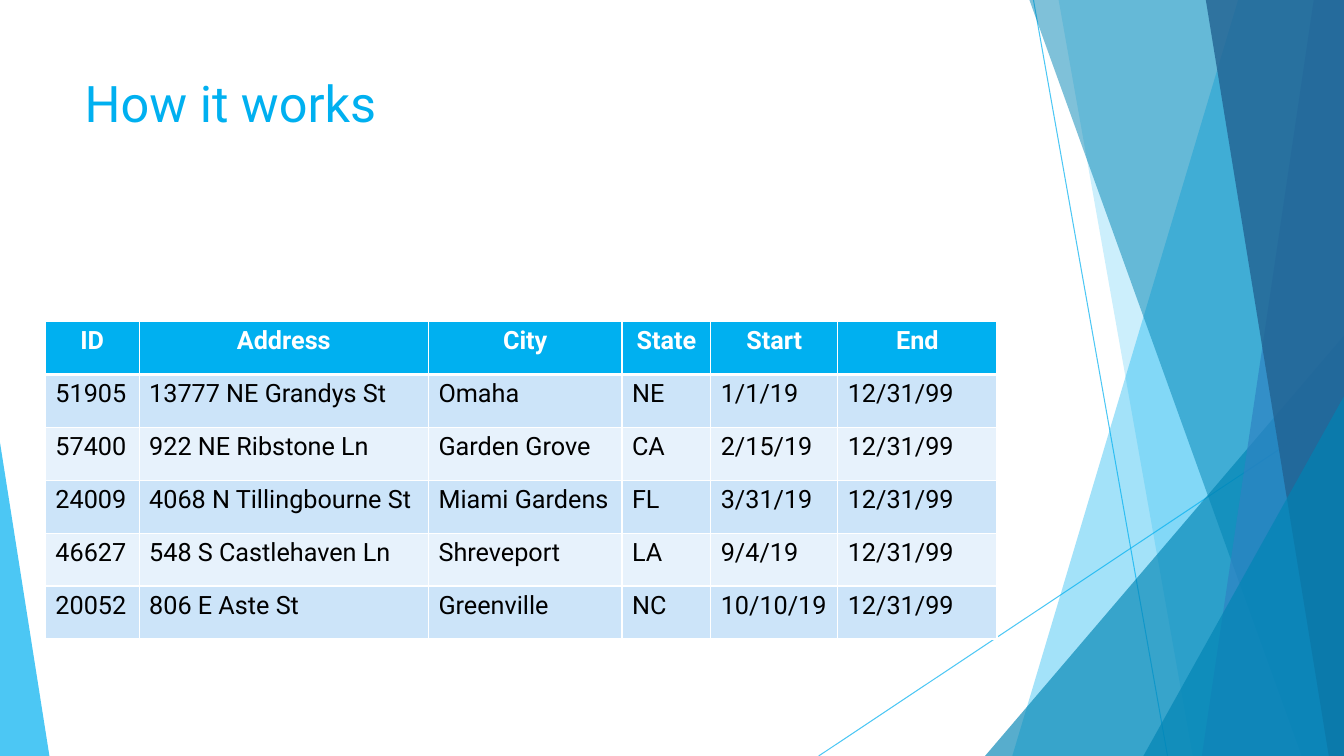
from lxml.etree import SubElement
from pptx import Presentation
from pptx.dml.color import RGBColor
from pptx.enum.shapes import MSO_CONNECTOR, MSO_SHAPE
from pptx.enum.text import MSO_ANCHOR, PP_ALIGN
from pptx.oxml import parse_xml
from pptx.oxml.ns import nsdecls, qn
from pptx.util import Inches, Pt

WIDTH, HEIGHT = 13.33, 7.5
FONT = "Roboto"
SKY, TEAL, BLUE, NAVY = "00B0F0", "0084B4", "2E83C3", "226292"
WHITE, BLACK = "FFFFFF", "000000"
ROW_FILLS = ["CCE4F9", "E7F2FC"]

TITLE = "How it works"
ROWS = [
    ["ID", "Address", "City", "State", "Start", "End"],
    ["51905", "13777 NE Grandys St", "Omaha", "NE", "1/1/19", "12/31/99"],
    ["57400", "922 NE Ribstone Ln", "Garden Grove", "CA", "2/15/19", "12/31/99"],
    ["24009", "4068 N Tillingbourne St", "Miami Gardens", "FL", "3/31/19", "12/31/99"],
    ["46627", "548 S Castlehaven Ln", "Shreveport", "LA", "9/4/19", "12/31/99"],
    ["20052", "806 E Aste St", "Greenville", "NC", "10/10/19", "12/31/99"],
]
COL_WIDTHS = [0.93, 2.87, 1.92, 0.88, 1.26, 1.58]
ROW_HEIGHT = 0.525

# Lines: x1, y1, x2, y2
LINES = [(10.25, 0, 11.58, HEIGHT), (WIDTH, 4.03, 8.12, HEIGHT)]
# Bands reach the right edge: top left x, bottom left x, colour, opacity
# Triangles stand on the bottom edge: left, top, width, apex, colour, opacity
FACETS = [
    ("band", 12.28, 10.04, SKY, 36),
    ("band", 10.5, 11.83, SKY, 20),
    ("triangle", 9.77, 3.33, 3.56, 1, TEAL, 66),
    ("band", 10.21, 12.91, TEAL, 50),
    ("band", 13.03, 11.92, BLUE, 70),
    ("band", 11.96, 13.18, NAVY, 80),
    ("triangle", 11.34, 3.93, 1.99, 1, TEAL, 66),
    ("triangle", 0, 4.39, 0.49, 0, SKY, 70),
]


def rgb(color):
    return RGBColor.from_string(color)


def set_opacity(s, percent):
    for clr in s._element.spPr.iter(qn("a:srgbClr")):
        SubElement(clr, qn("a:alpha")).set("val", str(percent * 1000))


def add_line(shapes, x1, y1, x2, y2):
    s = shapes.add_connector(MSO_CONNECTOR.STRAIGHT, Inches(x1), Inches(y1), Inches(x2), Inches(y2))
    s.line.color.rgb = rgb(SKY)
    s.line.width = Pt(0.75)
    set_opacity(s, 70)
    SubElement(s._element.spPr, qn("a:effectLst"))


def add_band(shapes, top_x, bottom_x):
    fb = shapes.build_freeform(Inches(top_x), 0)
    corners = [(WIDTH, 0), (WIDTH, HEIGHT), (bottom_x, HEIGHT)]
    fb.add_line_segments([(Inches(x), Inches(y)) for x, y in corners], close=True)
    return fb.convert_to_shape()


def add_triangle(shapes, left, top, width, apex):
    s = shapes.add_shape(MSO_SHAPE.ISOSCELES_TRIANGLE, Inches(left), Inches(top),
                         Inches(width), Inches(HEIGHT - top))
    s.adjustments[0] = apex
    return s


def add_text(tf, text, size, color, bold=False, align=PP_ALIGN.LEFT):
    p = tf.paragraphs[0]
    p.alignment = align
    r = p.add_run()
    r.text = text
    r.font.name, r.font.size, r.font.bold = FONT, Pt(size), bold
    r.font.color.rgb = rgb(color)


def set_borders(cell, top, bottom):
    tcPr = cell._tc.get_or_add_tcPr()
    for i, (side, points) in enumerate([("L", 1), ("R", 1), ("T", top), ("B", bottom)]):
        tcPr.insert(i, parse_xml(
            f'<a:ln{side} {nsdecls("a")} w="{Pt(points)}"><a:solidFill>'
            f'<a:srgbClr val="{WHITE}"/></a:solidFill></a:ln{side}>'))


def add_address_table(shapes):
    table = shapes.add_table(len(ROWS), len(COL_WIDTHS), Inches(0.45), Inches(3.19),
                             Inches(sum(COL_WIDTHS)), Inches(ROW_HEIGHT * len(ROWS))).table
    for col, width in zip(table.columns, COL_WIDTHS):
        col.width = Inches(width)
    for i, values in enumerate(ROWS):
        table.rows[i].height = Inches(ROW_HEIGHT)
        header = i == 0
        for j, value in enumerate(values):
            cell = table.cell(i, j)
            cell.fill.solid()
            cell.fill.fore_color.rgb = rgb(SKY if header else ROW_FILLS[(i - 1) % 2])
            set_borders(cell, top=3 if i == 1 else 1, bottom=3 if header else 1)
            add_text(cell.text_frame, value, 18, WHITE if header else BLACK, header,
                     PP_ALIGN.CENTER if header else PP_ALIGN.LEFT)


def main():
    prs = Presentation()
    prs.slide_width, prs.slide_height = Inches(WIDTH), Inches(HEIGHT)
    slide = prs.slides.add_slide(prs.slide_layouts[5])
    shapes = slide.shapes

    for line in LINES:
        add_line(shapes, *line)
    for kind, *geometry, color, opacity in FACETS:
        s = (add_band if kind == "band" else add_triangle)(shapes, *geometry)
        s.shadow.inherit = False
        s.fill.solid()
        s.fill.fore_color.rgb = rgb(color)
        s.line.fill.background()
        set_opacity(s, opacity)

    title = shapes.title
    title.left, title.top = Inches(0.74), Inches(0.67)
    title.width, title.height = Inches(9.4), Inches(1.44)
    title.text_frame.vertical_anchor = MSO_ANCHOR.TOP
    add_text(title.text_frame, TITLE, 36, SKY)

    add_address_table(shapes)
    prs.save("out.pptx")


if __name__ == "__main__":
    main()
